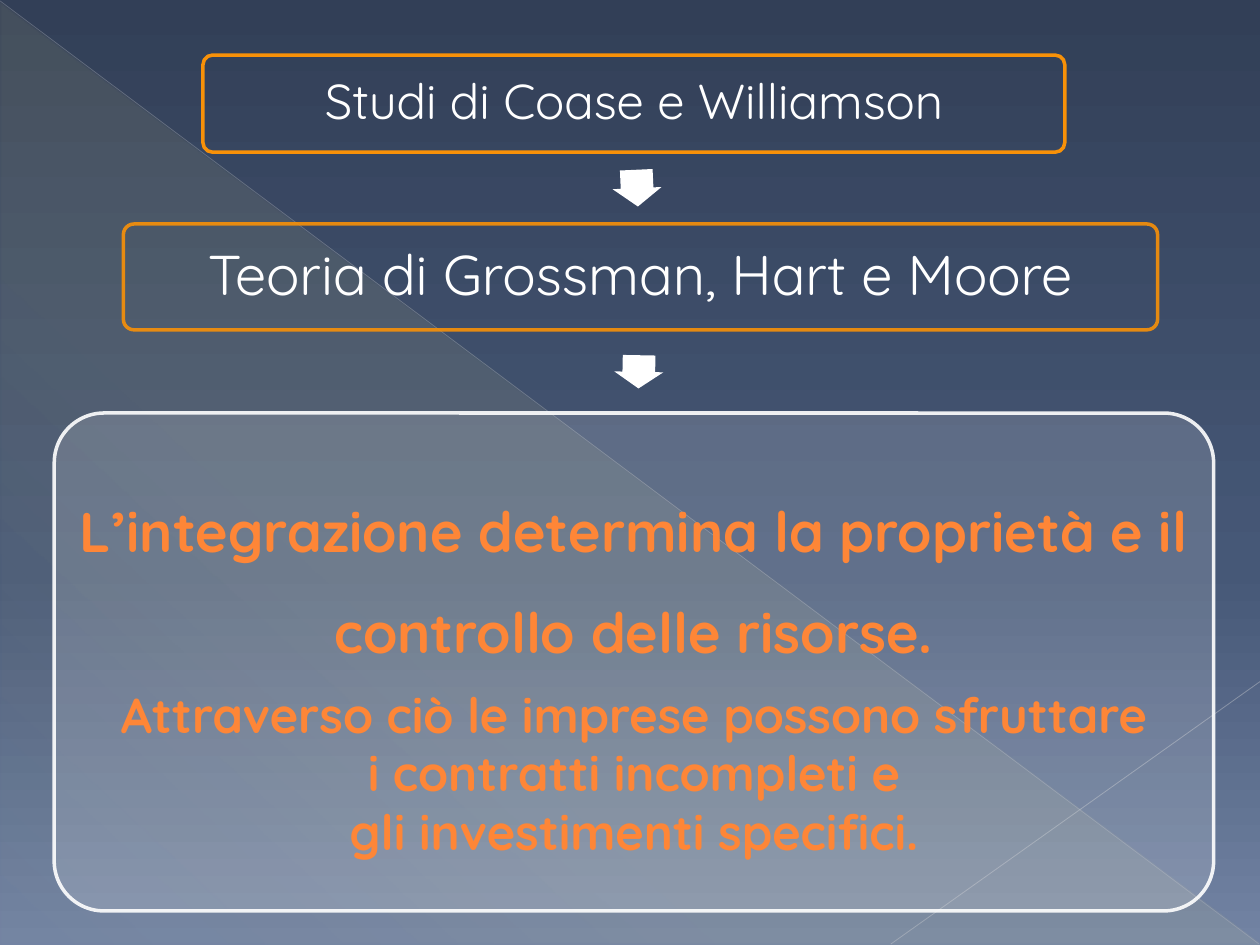
"""Build a slide on how integration theory leads to ownership and control of resources."""
from dataclasses import dataclass

from lxml import etree
from pptx import Presentation
from pptx.dml.color import RGBColor
from pptx.enum.shapes import MSO_CONNECTOR, MSO_SHAPE
from pptx.enum.text import MSO_ANCHOR, MSO_AUTO_SIZE, PP_ALIGN
from pptx.oxml.ns import qn
from pptx.util import Pt

ROUNDED = MSO_SHAPE.ROUNDED_RECTANGLE
ARROW = MSO_SHAPE.RIGHT_ARROW
TRIANGLE = MSO_SHAPE.RIGHT_TRIANGLE
STRAIGHT = MSO_CONNECTOR.STRAIGHT
MIDDLE = MSO_ANCHOR.MIDDLE
CENTER = PP_ALIGN.CENTER
NO_AUTOFIT = MSO_AUTO_SIZE.NONE

FONT = "Quicksand"
WHITE, AMBER, ORANGE = "FFFFFF", "F89108", "FE8637"
WIDTH, HEIGHT = 720, 540


@dataclass
class Area:
    left: float
    top: float
    width: float
    height: float

    def lengths(self) -> tuple:
        return Pt(self.left), Pt(self.top), Pt(self.width), Pt(self.height)


@dataclass
class Box:
    area: Area
    border: str
    border_opacity: int
    fill_opacity: int = 0


@dataclass
class Step:
    area: Area
    rotation: float


@dataclass
class Ray:
    start: tuple
    end: tuple
    color: str
    weight: float
    opacity: int


@dataclass
class Line:
    text: str
    size: float
    color: str = WHITE
    bold: bool = False
    spacing: float = 0.9
    after: float = 0


def rgb(code: str) -> RGBColor:
    return RGBColor.from_string(code)


def set_opacity(owner, color_path: str, percent: int) -> None:
    color = owner.element.spPr.xpath(color_path)[0]
    etree.SubElement(color, qn("a:alpha"), val=str(percent * 1000))


def replace_with_gradient(solid, stops: list, angle: int) -> None:
    gradient = etree.Element(qn("a:gradFill"), rotWithShape="1")
    stop_list = etree.SubElement(gradient, qn("a:gsLst"))
    for position, code, opacity in stops:
        stop = etree.SubElement(stop_list, qn("a:gs"), pos=str(position * 1000))
        color = etree.SubElement(stop, qn("a:srgbClr"), val=code)
        if opacity < 100:
            etree.SubElement(color, qn("a:alpha"), val=str(opacity * 1000))
    etree.SubElement(gradient, qn("a:lin"), ang=str(angle * 60000), scaled="0")
    solid.getparent().replace(solid, gradient)


def paint_backdrop(slide) -> None:
    slide.background.fill.solid()
    replace_with_gradient(
        slide.element.xpath("./p:cSld/p:bg/p:bgPr/a:solidFill")[0],
        [(0, "323F57", 100), (60, "465877", 100), (100, "7283A3", 100)], 90)
    glow = slide.shapes.add_shape(TRIANGLE, *Area(0.5, 1.5, 719.5, 538.5).lengths())
    glow.shadow.inherit = False
    glow.line.fill.background()
    glow.fill.solid()
    replace_with_gradient(
        glow.element.spPr.xpath("./a:solidFill")[0],
        [(0, "FFF39D", 10), (70, "FFF39D", 8), (100, "FFF39D", 1)], 133)


def draw_ray(slide, ray: Ray) -> None:
    ends = [Pt(length) for length in (*ray.start, *ray.end)]
    connector = slide.shapes.add_connector(STRAIGHT, *ends)
    connector.line.color.rgb = rgb(ray.color)
    connector.line.width = Pt(ray.weight)
    set_opacity(connector, "./a:ln/a:solidFill/a:srgbClr", ray.opacity)
    etree.SubElement(connector.element.spPr, qn("a:effectLst"))


def draw_box(slide, box: Box):
    frame = slide.shapes.add_shape(ROUNDED, *box.area.lengths())
    frame.adjustments[0] = 0.1
    frame.shadow.inherit = False
    frame.line.color.rgb = rgb(box.border)
    frame.line.width = Pt(2)
    set_opacity(frame, "./a:ln/a:solidFill/a:srgbClr", box.border_opacity)
    if box.fill_opacity:
        frame.fill.solid()
        frame.fill.fore_color.rgb = rgb(WHITE)
        set_opacity(frame, "./a:solidFill/a:srgbClr", box.fill_opacity)
    else:
        frame.fill.background()
    return frame


def draw_step(slide, step: Step) -> None:
    arrow = slide.shapes.add_shape(ARROW, *step.area.lengths())
    arrow.adjustments[0] = 0.667
    arrow.adjustments[1] = 0.5
    arrow.rotation = step.rotation
    arrow.shadow.inherit = False
    arrow.fill.solid()
    arrow.fill.fore_color.rgb = rgb(WHITE)
    arrow.line.fill.background()


def write_lines(holder, lines: list) -> None:
    frame = holder.text_frame
    frame.text = "\n".join(line.text for line in lines)
    frame.word_wrap = True
    frame.auto_size = NO_AUTOFIT
    frame.vertical_anchor = MIDDLE
    frame.margin_left = frame.margin_right = Pt(3)
    frame.margin_top = frame.margin_bottom = Pt(3)
    for paragraph, line in zip(frame.paragraphs, lines):
        paragraph.alignment = CENTER
        paragraph.line_spacing = line.spacing
        paragraph.space_before = Pt(0)
        paragraph.space_after = Pt(line.after)
        for run in paragraph.runs:
            run.font.name = FONT
            run.font.size = Pt(line.size)
            run.font.bold = line.bold
            run.font.color.rgb = rgb(line.color)


def place_over(placeholder, area: Area) -> None:
    (placeholder.left, placeholder.top,
     placeholder.width, placeholder.height) = area.lengths()
    placeholder.element.getparent().append(placeholder.element)


def remove_bullets(placeholder) -> None:
    for paragraph in placeholder.element.txBody.xpath("./a:p"):
        properties = paragraph.get_or_add_pPr()
        properties.set("marL", "0")
        properties.set("indent", "0")
        etree.SubElement(properties, qn("a:buNone"))


STUDIES = Box(Area(116, 31.5, 492.5, 55.5), AMBER, 100)
THEORY = Box(Area(70.5, 128, 591, 60.5), AMBER, 90)
CONCLUSION = Box(Area(31, 236, 662.5, 284.5), WHITE, 90, 15)
STEPS = [Step(Area(353.5, 93.5, 21, 28), 87.4), Step(Area(355.5, 198.5, 19, 28), 91.1)]
RAYS = [Ray((0, 0.5), (719.5, 539.5), "BABDC4", 0.39, 35),
        Ray((720, 389.5), (509, 539.5), "C1C4CA", 0.47, 45)]
CONCLUSION_LINES = [
    Line("L’integrazione determina la proprietà e il controllo delle risorse.",
         32, ORANGE, True, 1.5, 11),
    *(Line(text, 28, ORANGE, True, 1) for text in (
        "Attraverso ciò le imprese possono sfruttare",
        "i contratti incompleti e",
        "gli investimenti specifici."))]


def main() -> None:
    deck = Presentation()
    deck.slide_width, deck.slide_height = Pt(WIDTH), Pt(HEIGHT)
    slide = deck.slides.add_slide(deck.slide_layouts[1])
    paint_backdrop(slide)
    for ray in RAYS:
        draw_ray(slide, ray)
    draw_box(slide, STUDIES)
    studies = slide.shapes.title
    place_over(studies, STUDIES.area)
    write_lines(studies, [Line("Studi di Coase e Williamson", 28, after=10)])
    theory = draw_box(slide, THEORY)
    write_lines(theory, [Line("Teoria di Grossman, Hart e Moore", 32, after=11)])
    for step in STEPS:
        draw_step(slide, step)
    draw_box(slide, CONCLUSION)
    conclusion = slide.placeholders[1]
    place_over(conclusion, CONCLUSION.area)
    write_lines(conclusion, CONCLUSION_LINES)
    remove_bullets(conclusion)
    deck.save("out.pptx")


if __name__ == "__main__":
    main()
